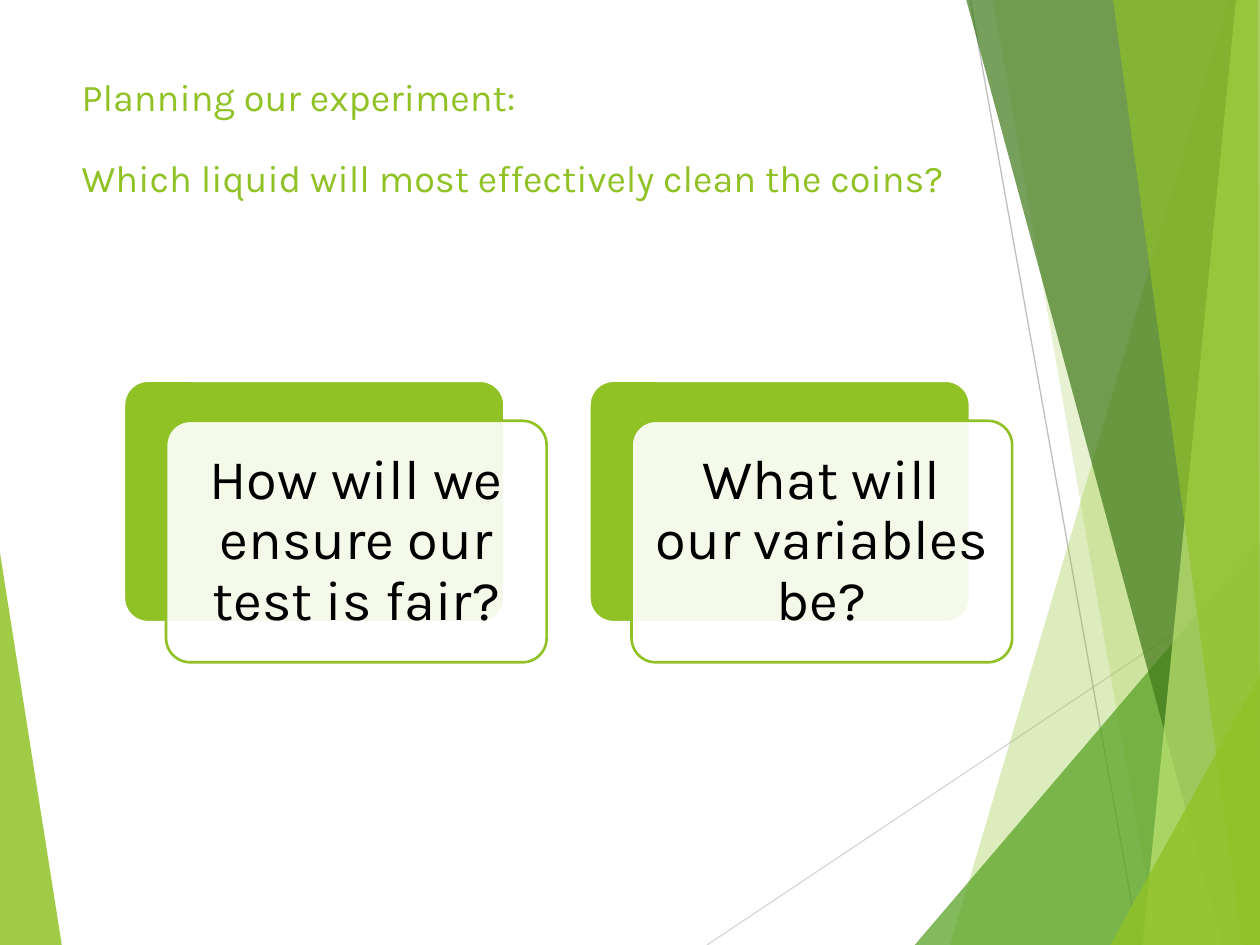
from lxml import etree
from pptx import Presentation
from pptx.dml.color import RGBColor
from pptx.enum.shapes import MSO_CONNECTOR as Connector, MSO_SHAPE as Shape
from pptx.enum.text import MSO_ANCHOR as Anchor, PP_ALIGN as Align
from pptx.oxml.ns import qn
from pptx.util import Pt

LIME = RGBColor(0x90, 0xC2, 0x26)
GREEN = RGBColor(0x54, 0xA0, 0x21)
FOREST = RGBColor(0x3F, 0x78, 0x19)
PALE_LIME = RGBColor(0xC0, 0xE4, 0x74)
LIGHT_GREY = RGBColor(0xD9, 0xD9, 0xD9)
GREY = RGBColor(0xBF, 0xBF, 0xBF)
WHITE = RGBColor(0xFF, 0xFF, 0xFF)
BLACK = RGBColor(0, 0, 0)
FONT = "Karla"


def fill_shape(shape, color, opacity=100):
    """Fill with a colour at an opacity in percent, without a shadow."""
    shape.shadow.inherit = False
    shape.fill.solid()
    shape.fill.fore_color.rgb = color
    if opacity < 100:
        color_node = shape.fill._xPr.find(qn("a:solidFill"))[0]
        etree.SubElement(color_node, qn("a:alpha"), val=str(opacity * 1000))


def add_span(para, text, size, color):
    para.line_spacing = 0.9
    span = para.add_run()
    span.text = text
    span.font.name = FONT
    span.font.size = Pt(size)
    span.font.color.rgb = color


deck = Presentation()
deck.slide_width, deck.slide_height = Pt(720), Pt(540)
page = deck.slides.add_slide(deck.slide_layouts[6])
shapes = page.shapes

# Background rays
rays = [
    (404, 540, 720, 329, LIGHT_GREY),
    (554.5, 0, 651, 540, GREY),
]
for x1, y1, x2, y2, color in rays:
    ray = shapes.add_connector(Connector.STRAIGHT, Pt(x1), Pt(y1), Pt(x2), Pt(y2))
    ray.line.color.rgb = color
    ray.line.width = Pt(0.75)
    etree.SubElement(ray._element.spPr, qn("a:effectLst"))

# Translucent facets, from back to front: colour, opacity, corners
facets = [
    (LIME, 85, [(0, 316), (35.3, 540), (0, 540)]),
    (LIME, 30, [(702, 0), (543, 540), (720, 540), (720, 0)]),
    (LIME, 20, [(567.5, 0), (661.5, 540), (720, 540), (720, 0)]),
    (GREEN, 72, [(522.7, 540), (720, 309), (720, 540)]),
    (FOREST, 70, [(552.2, 0), (698.5, 540), (720, 540), (720, 0)]),
    (PALE_LIME, 70, [(706.3, 0), (653, 540), (720, 540), (720, 0)]),
    (LIME, 65, [(636, 0), (710, 540), (720, 540), (718.6, 0)]),
    (LIME, 80, [(634.5, 540), (720, 385.5), (720, 540)]),
]
for color, opacity, corners in facets:
    points = [(Pt(x), Pt(y)) for x, y in corners]
    builder = shapes.build_freeform(*points[0])
    builder.add_line_segments(points[1:], close=True)
    facet = builder.convert_to_shape()
    fill_shape(facet, color, opacity)
    facet.line.fill.background()

# Title
title = shapes.add_textbox(Pt(39.6), Pt(41.8), Pt(507.6), Pt(103.7)).text_frame
title.word_wrap = True
add_span(title.paragraphs[0], "Planning our experiment:", 21.6, LIME)
question = title.add_paragraph()
question.space_before = Pt(22.8)
add_span(question, "Which liquid will most effectively clean the coins?", 21.6, LIME)

# Question cards, each a white panel shifted over a green one
CARD_TOP, CARD_WIDTH, CARD_HEIGHT = 217.6, 217.44, 138
CARD_LEFT, CARD_STEP = 70.8, 266
SHIFT_X, SHIFT_Y = 24.1, 22.9
questions = ["How will we ensure our test is fair?", "What will our variables be?"]
for index, text in enumerate(questions):
    left = CARD_LEFT + index * CARD_STEP
    for layer, (color, opacity, outline) in enumerate([(LIME, 100, WHITE), (WHITE, 90, LIME)]):
        panel = shapes.add_shape(
            Shape.ROUNDED_RECTANGLE,
            Pt(left + layer * SHIFT_X), Pt(CARD_TOP + layer * SHIFT_Y),
            Pt(CARD_WIDTH), Pt(CARD_HEIGHT))
        panel.adjustments[0] = 0.1
        fill_shape(panel, color, opacity)
        panel.line.color.rgb = outline
        panel.line.width = Pt(1.5)
    frame = panel.text_frame
    frame.word_wrap = True
    frame.vertical_anchor = Anchor.MIDDLE
    frame.margin_left = frame.margin_right = Pt(9.4)
    frame.margin_top = frame.margin_bottom = Pt(9.4)
    para = frame.paragraphs[0]
    para.alignment = Align.CENTER
    add_span(para, text, 32, BLACK)

deck.save("out.pptx")
